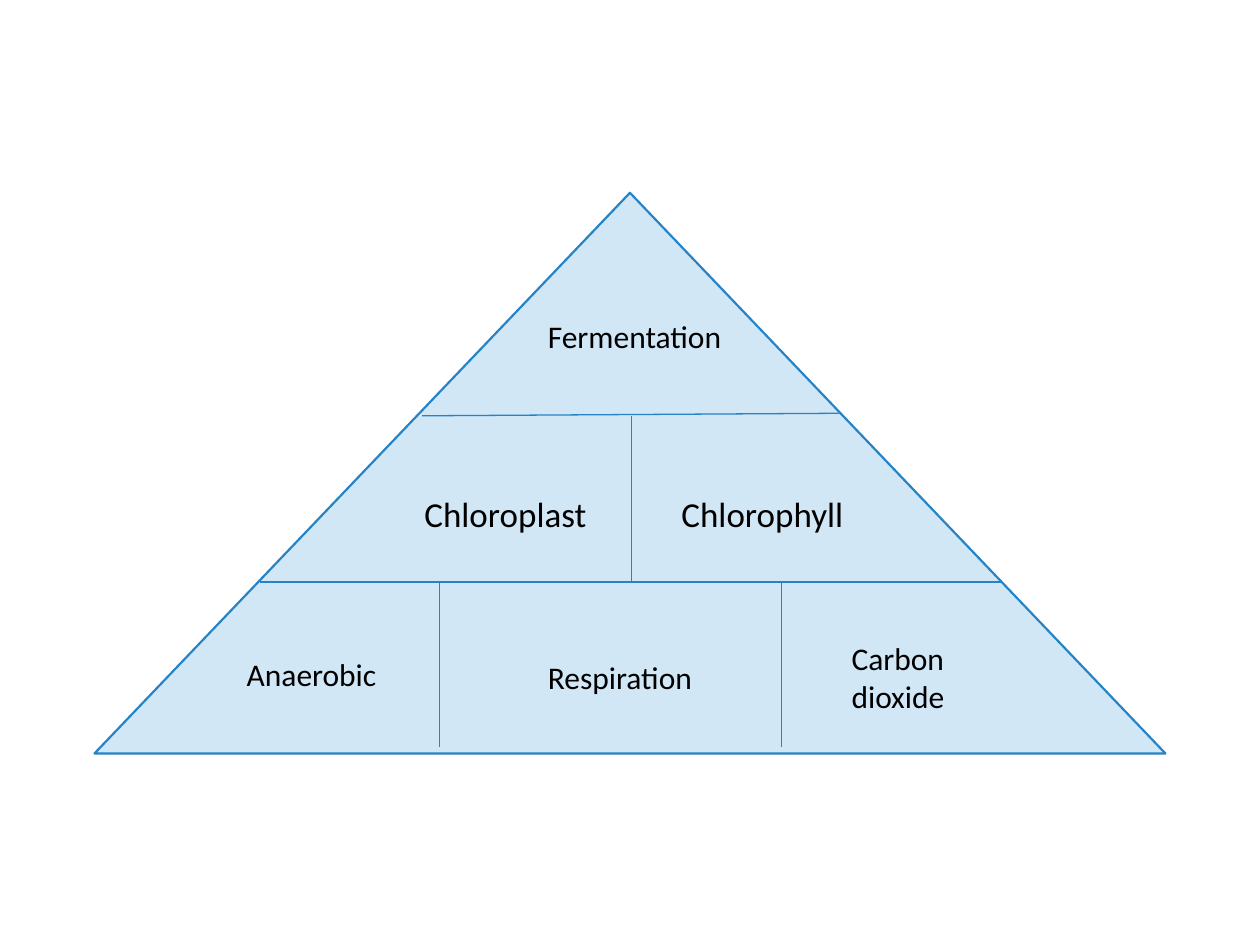
from lxml import etree
from pptx import Presentation
from pptx.dml.color import RGBColor
from pptx.enum.shapes import MSO_CONNECTOR as Connector, MSO_SHAPE as Shape
from pptx.enum.text import MSO_AUTO_SIZE as AutoSize
from pptx.oxml.ns import qn
from pptx.util import Inches, Pt

FILL, EDGE, INK = "D1E7F6", "2683C6", "000000"
PYRAMID = (0.75, 1.53, 8.5, 4.45)
DIVIDERS = [
    (2.06, 4.62, 7.95, 4.62),
    (3.35, 3.3, 6.66, 3.28),
    (5.01, 3.3, 5.01, 4.62),
    (3.49, 4.62, 3.49, 5.93),
    (6.2, 4.62, 6.2, 5.93),
]
LABELS = [
    ("Fermentation", 18, (4.25, 2.47, 1.63, 0.4)),
    ("Chloroplast", 20, (3.27, 3.86, 1.74, 0.44)),
    ("Chlorophyll", 20, (5.31, 3.86, 1.77, 0.44)),
    ("Anaerobic", 18, (1.86, 5.15, 1.74, 0.4)),
    ("Respiration", 18, (4.25, 5.17, 1.52, 0.4)),
    ("Carbon dioxide", 18, (6.66, 5.02, 1.29, 0.71)),
]


def color(value):
    return RGBColor.from_string(value)


def inches(values):
    return [Inches(value) for value in values]


def style_line(line, width):
    line.color.rgb = color(EDGE)
    line.width = Pt(width)


def add_pyramid(page):
    pyramid = page.shapes.add_shape(Shape.ISOSCELES_TRIANGLE, *inches(PYRAMID))
    pyramid.shadow.inherit = False
    pyramid.fill.solid()
    pyramid.fill.fore_color.rgb = color(FILL)
    style_line(pyramid.line, 1.25)


def add_divider(page, ends):
    divider = page.shapes.add_connector(Connector.STRAIGHT, *inches(ends))
    style_line(divider.line, 0.75)
    etree.SubElement(divider._element.spPr, qn("a:effectLst"))


def add_label(page, text, size, place):
    box = page.shapes.add_textbox(*inches(place))
    frame = box.text_frame
    frame.word_wrap = True
    frame.auto_size = AutoSize.SHAPE_TO_FIT_TEXT
    frame.text = text
    font = frame.paragraphs[0].runs[0].font
    font.name = "Calibri"
    font.size = Pt(size)
    font.color.rgb = color(INK)


def main():
    deck = Presentation()
    deck.slide_width, deck.slide_height = inches((10, 7.5))
    page = deck.slides.add_slide(deck.slide_layouts[6])
    add_pyramid(page)
    for ends in DIVIDERS:
        add_divider(page, ends)
    for label in LABELS:
        add_label(page, *label)
    deck.save("out.pptx")


if __name__ == "__main__":
    main()
